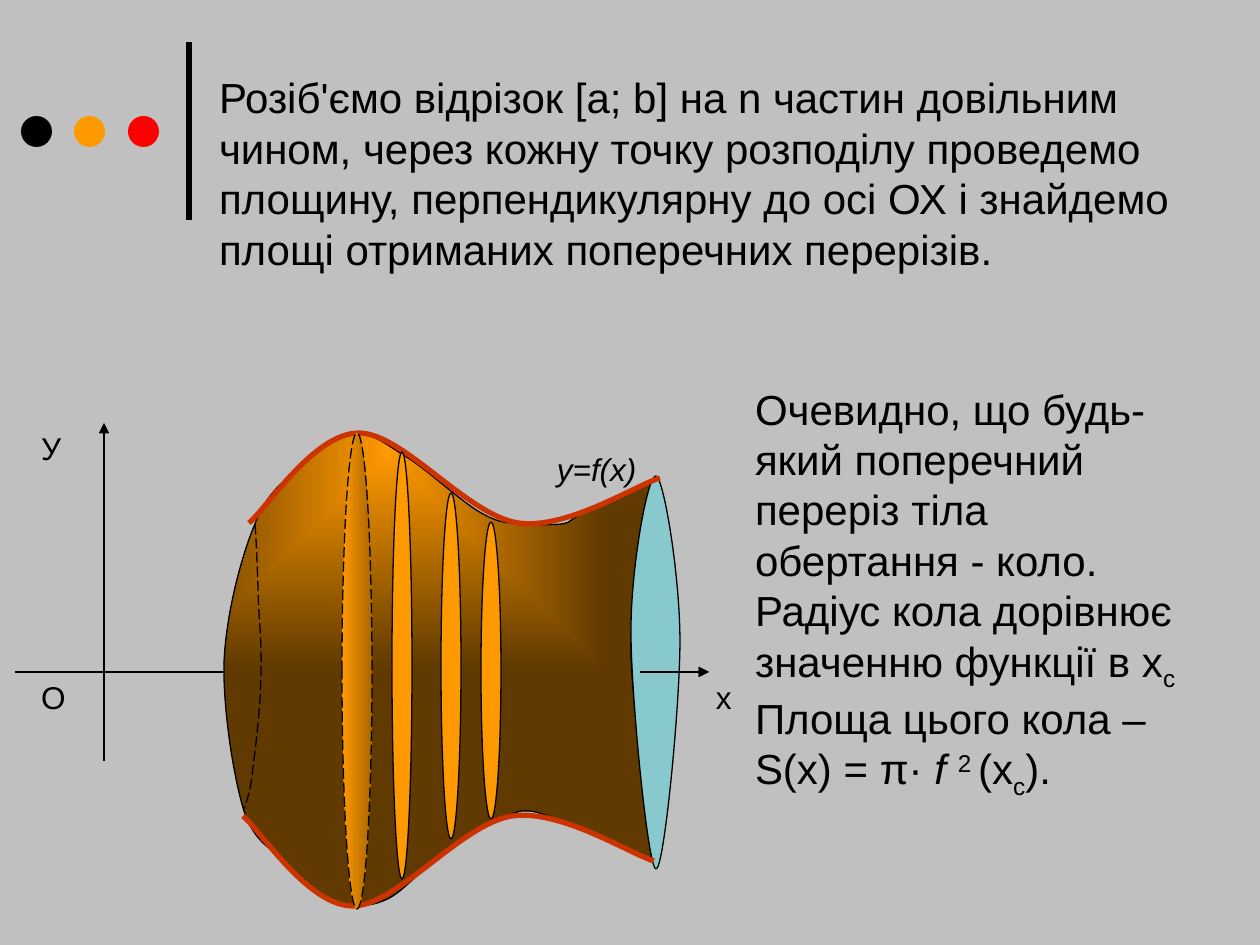
from lxml import etree
from pptx import Presentation
from pptx.dml.color import RGBColor
from pptx.enum.dml import MSO_LINE
from pptx.enum.shapes import MSO_CONNECTOR, MSO_SHAPE
from pptx.enum.text import MSO_ANCHOR, MSO_AUTO_SIZE, PP_ALIGN
from pptx.oxml.ns import qn
from pptx.util import Pt

PX = 914400 // 126  # EMU in one px
FONT = "Arial"
COLORS = {"background": "C0C0C0", "ink": "000000", "orange": "FF9900", "red": "FF0000",
          "shade": "603A00", "amber": "AA6600", "mouth": "88C9CE", "profile": "CC3300"}

# Bezier paths in px from the figure's corner: a start, then three points per curve
BODY = [(240, 104), (252, 71), (272, 59), (289, 44), (305, 30), (321, 16), (339, 15),
        (355, 12), (367, 21), (388, 35), (410, 47), (447, 83), (468, 94),
        (488, 105), (494, 102), (507, 104), (521, 105), (537, 105), (547, 104),
        (557, 102), (551, 102), (567, 94), (582, 87), (582, 90), (643, 59),
        (631, 87), (618, 160), (616, 223), (615, 287), (639, 408), (636, 442),
        (592, 418), (611, 428), (596, 422), (581, 415), (562, 407), (547, 402),
        (532, 396), (522, 390), (507, 391), (493, 394), (474, 402), (458, 412),
        (441, 422), (423, 439), (408, 451), (393, 463), (382, 476), (368, 481),
        (354, 487), (338, 486), (326, 485), (315, 483), (309, 478), (299, 471),
        (290, 465), (281, 454), (270, 442), (257, 428), (240, 424), (229, 391),
        (219, 359), (208, 291), (209, 243), (211, 195), (226, 137), (240, 104)]
MOUTH = [(641, 56), (649, 58), (665, 156), (665, 221), (665, 287), (649, 451), (641, 449),
         (633, 448), (616, 277), (616, 211), (616, 146), (633, 54), (641, 56)]
HIDDEN_RIM = [(240, 104), (241, 114), (242, 143), (243, 167), (243, 192), (247, 221), (246, 250),
              (246, 281), (241, 325), (238, 347), (236, 370), (232, 380), (229, 389)]
UPPER_PROFILE = [(645, 58), (621, 65), (552, 110), (503, 103), (452, 95), (388, 13), (344, 13),
                 (299, 13), (252, 88), (234, 103)]
LOWER_PROFILE = [(x - 6, 499 - y) for x, y in UPPER_PROFILE]


def rgb(name):
    return RGBColor.from_string(COLORS[name])


def paint(shape, fill=None, line="ink", width=0.75, dashed=False):
    shape.shadow.inherit = False
    if fill:
        shape.fill.solid()
        shape.fill.fore_color.rgb = rgb(fill)
    else:
        shape.fill.background()
    if line is None:
        shape.line.fill.background()
        return
    shape.line.color.rgb = rgb(line)
    shape.line.width = Pt(width)
    if dashed:
        shape.line.dash_style = MSO_LINE.LONG_DASH


def paint_gradient(shape, start, end, direction, **attributes):
    """Two-colour gradient; direction is 'lin' or 'path'."""
    shape.fill.gradient()
    for stop, name in zip(shape.fill.gradient_stops, (start, end)):
        stop.color.rgb = rgb(name)
    gradient = shape._element.spPr.find(qn("a:gradFill"))
    for old in gradient.findall(qn("a:lin")):
        gradient.remove(old)
    return etree.SubElement(gradient, qn("a:" + direction), **attributes)


def add_curve(slide, left, top, path, closed=False, **style):
    """Freeform through the Bezier points, its segments joined by threes into curves."""
    points = [((left + x) * PX, (top + y) * PX) for x, y in path]
    builder = slide.shapes.build_freeform(*points[0], scale=1.0)
    builder.add_line_segments(points[1:], close=closed)
    shape = builder.convert_to_shape()
    segments = list(shape._element.iter(qn("a:lnTo")))
    for i in range(0, len(segments), 3):
        curve = etree.Element(qn("a:cubicBezTo"))
        segments[i].addprevious(curve)
        for segment in segments[i:i + 3]:
            curve.append(segment[0])
            segment.getparent().remove(segment)
    paint(shape, **style)
    return shape


def add_oval(slide, left, top, width, height, **style):
    shape = slide.shapes.add_shape(MSO_SHAPE.OVAL, left * PX, top * PX, width * PX, height * PX)
    paint(shape, **style)
    return shape


def add_line(slide, x1, y1, x2, y2, width=0.75, arrow=False):
    line = slide.shapes.add_connector(MSO_CONNECTOR.STRAIGHT, x1 * PX, y1 * PX, x2 * PX, y2 * PX)
    line.line.color.rgb = rgb("ink")
    line.line.width = Pt(width)
    if arrow:
        etree.SubElement(line.line._get_or_add_ln(), qn("a:tailEnd"), type="triangle")
    etree.SubElement(line._element.spPr, qn("a:effectLst"))


def format_text(shape, size):
    frame = shape.text_frame
    frame.word_wrap = True
    frame.auto_size = MSO_AUTO_SIZE.NONE
    frame.vertical_anchor = MSO_ANCHOR.TOP
    frame.margin_left = frame.margin_right = frame.margin_top = frame.margin_bottom = 6 * PX
    for paragraph in frame.paragraphs:
        paragraph.alignment = PP_ALIGN.LEFT
        paragraph.line_spacing = 1.0
        paragraph.space_before = paragraph.space_after = Pt(0)
        for run in paragraph.runs:
            run.font.name = FONT
            run.font.size = Pt(size)
            run.font.color.rgb = rgb("ink")


def move(shape, left, top, width, height):
    shape.left, shape.top, shape.width, shape.height = (n * PX for n in (left, top, width, height))


def add_ornament(slide, left, top):
    """Three dots and the upright bar beside the title."""
    for i, name in enumerate(("ink", "orange", "red")):
        add_oval(slide, left + 107 * i // 2, top + 74, 31, 31, fill=name, line=None)
    add_line(slide, left + 168, top + 178, left + 168, top, width=3)


def fill_title(slide, left, top, width, height):
    title = slide.shapes.title
    move(title, left, top, width, height)
    title.text_frame.text = (
        "Розіб'ємо відрізок [a; b] на n частин довільним чином, через кожну точку розподілу "
        "проведемо площину, перпендикулярну до осі ОХ і знайдемо площі отриманих "
        "поперечних перерізів.")
    format_text(title, 24)


def fill_body(slide, left, top, width, height):
    body = slide.placeholders[1]
    move(body, left, top, width, height)
    # Each run: text, baseline shift in percent, italic
    paragraphs = [
        [("Очевидно, що будь-який поперечний переріз тіла обертання - коло. "
          "Радіус кола дорівнює значенню функції в х", 0, False), ("с", -25, False)],
        [("Площа цього кола – S(x) = π· ", 0, False), ("f ", 0, True), ("2 ", 30, False),
         ("(x", 0, False), ("с", -25, False), (").", 0, False)]]
    frame = body.text_frame
    for i, runs in enumerate(paragraphs):
        paragraph = frame.add_paragraph() if i else frame.paragraphs[0]
        properties = paragraph._p.get_or_add_pPr()
        properties.set("marL", "0")
        properties.set("indent", "0")
        etree.SubElement(properties, qn("a:buNone"))
        for text, baseline, italic in runs:
            run = paragraph.add_run()
            run.text = text
            run.font.italic = italic
            if baseline:
                run._r.get_or_add_rPr().set("baseline", str(baseline * 1000))
    format_text(body, 24)


def add_figure(slide, left, top):
    """Solid of revolution on its axes, with cross-sections and labels."""
    axis_y = top + 252
    add_line(slide, left, axis_y, left + 694, axis_y, arrow=True)
    add_line(slide, left + 89, top + 341, left + 89, top + 3, arrow=True)

    solid = add_curve(slide, left, top, BODY, closed=True)
    path = paint_gradient(solid, "orange", "shade", "path", path="rect")
    etree.SubElement(path, qn("a:fillToRect"), l="38000", t="-20000", r="62000", b="120000")
    add_curve(slide, left, top, MOUTH, closed=True, fill="mouth")
    add_curve(slide, left, top, HIDDEN_RIM, dashed=True)
    for profile in (LOWER_PROFILE, UPPER_PROFILE):
        add_curve(slide, left, top, profile, line="profile", width=3)
    add_line(slide, left + 625, axis_y, left + 694, axis_y, arrow=True)

    for text, x, y, width in (("У", 20, 3, 79), ("х", 695, 252, 79),
                              ("y=f(x)", 536, 24, 179), ("O", 20, 252, 79)):
        label = slide.shapes.add_textbox((left + x) * PX, (top + y) * PX, width * PX, 48 * PX)
        label.text_frame.text = text
        format_text(label, 18)
        label.text_frame.paragraphs[0].runs[0].font.italic = text == "y=f(x)"

    widest = add_oval(slide, left + 327, top + 13, 30, 476, dashed=True)
    paint_gradient(widest, "orange", "amber", "lin", ang="0", scaled="0")
    for x, y, height in ((377, 32, 427), (466, 102, 297), (426, 73, 346)):
        add_oval(slide, left + x, top + y, 20, height, fill="orange")


def main():
    presentation = Presentation()
    presentation.slide_width, presentation.slide_height = 1260 * PX, 945 * PX
    slide = presentation.slides.add_slide(presentation.slide_layouts[1])
    slide.background.fill.solid()
    slide.background.fill.fore_color.rgb = rgb("background")
    add_ornament(slide, 21, 42)
    fill_title(slide, 213, 66, 1022, 207)
    add_figure(slide, 15, 420)
    fill_body(slide, 749, 377, 456, 423)
    presentation.save("out.pptx")


if __name__ == "__main__":
    main()
